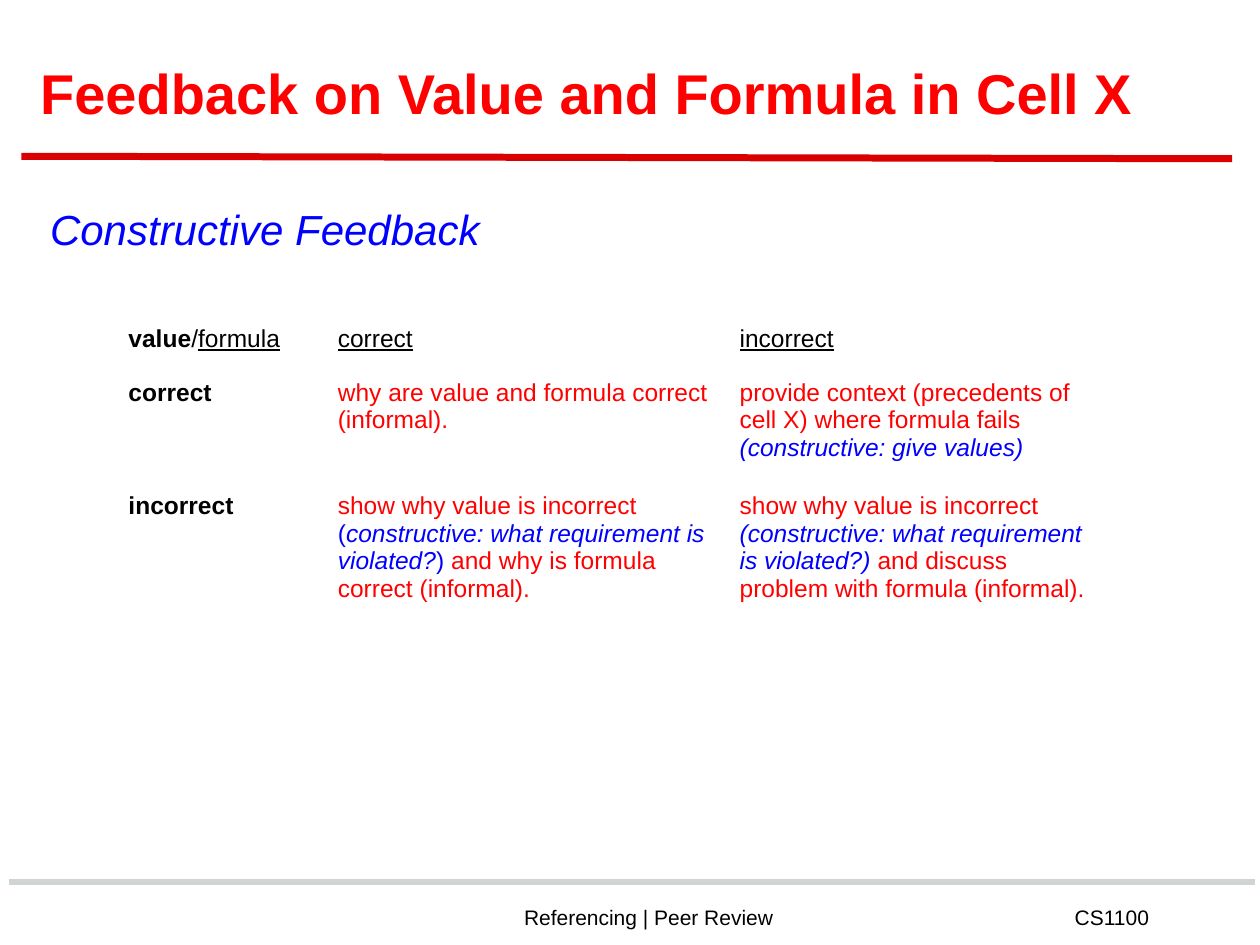
"""Build the slide on constructive feedback for the value and formula in a cell."""
from pptx import Presentation
from pptx.dml.color import RGBColor
from pptx.enum.shapes import MSO_CONNECTOR
from pptx.enum.text import MSO_ANCHOR, PP_ALIGN
from pptx.oxml.ns import qn
from pptx.util import Cm, Pt
from lxml.etree import SubElement

COLOURS = {
    "black": "000000",
    "red": "FF0000",
    "blue": "0000FF",
    "title_rule": "DA0002",
    "footer_rule": "CFD4D4",
}
INSET = 0.25

STYLES = {
    "plain": {},
    "bold": {"bold": True},
    "underline": {"underline": True},
    "red": {"colour": "red"},
    "blue": {"colour": "blue"},
    "hint": {"colour": "blue", "italic": True},
}

COLUMN_WIDTHS = (4.22, 8.1, 7.77)
ROW_HEIGHT = 1.07
FEEDBACK = [
    [
        [("value", "bold"), ("/", "plain"), ("formula", "underline")],
        [("correct", "underline")],
        [("incorrect", "underline")],
    ],
    [
        [("correct", "bold")],
        [("why are value and formula correct (informal).", "red")],
        [
            ("provide context (precedents of cell X) where formula fails ", "red"),
            ("(constructive: give values)", "hint"),
        ],
    ],
    [
        [("incorrect", "bold")],
        [
            ("show why value is incorrect ", "red"),
            ("(", "blue"),
            ("constructive: what requirement is violated?", "hint"),
            (")", "blue"),
            (" and why is formula correct (informal).", "red"),
        ],
        [
            ("show why value is incorrect ", "red"),
            ("(constructive: what requirement is violated?)", "hint"),
            (" and discuss problem with formula (informal).", "red"),
        ],
    ],
]


def rgb(name):
    return RGBColor.from_string(COLOURS[name])


def style_font(font, size, colour="black", bold=False, italic=False, underline=False):
    font.name = "Arial"
    font.size = Pt(size)
    font.color.rgb = rgb(colour)
    font.bold = bold
    font.italic = italic
    font.underline = underline


def add_rule(slide, start, end, colour):
    ends = [Cm(value) for value in (*start, *end)]
    rule = slide.shapes.add_connector(MSO_CONNECTOR.STRAIGHT, *ends)
    rule.line.color.rgb = rgb(colour)
    rule.line.width = Pt(4)
    SubElement(rule.element.spPr, qn("a:effectLst"))


def add_text(slide, box, words, size, top_inset=INSET, align=PP_ALIGN.LEFT,
             anchor=MSO_ANCHOR.TOP, **style):
    frame = slide.shapes.add_textbox(*[Cm(value) for value in box]).text_frame
    frame.word_wrap = True
    frame.vertical_anchor = anchor
    frame.margin_left = frame.margin_right = Cm(INSET)
    frame.margin_top, frame.margin_bottom = Cm(top_inset), Cm(INSET)
    frame.text = words
    paragraph = frame.paragraphs[0]
    paragraph.alignment = align
    style_font(paragraph.runs[0].font, size, **style)


def add_footer(slide, left, width, words):
    add_text(slide, (left, 17.93, width, 1.12), words, 12,
             align=PP_ALIGN.CENTER, anchor=MSO_ANCHOR.MIDDLE)


def fill_cell(cell, pieces):
    cell.fill.background()
    cell.margin_left = cell.margin_right = Cm(INSET)
    cell.margin_top = cell.margin_bottom = Cm(INSET)
    paragraph = cell.text_frame.paragraphs[0]
    for words, style in pieces:
        run = paragraph.add_run()
        run.text = words
        style_font(run.font, 14, **STYLES[style])


def add_feedback_table(slide, left, top):
    row_count = len(FEEDBACK)
    table = slide.shapes.add_table(
        row_count, len(COLUMN_WIDTHS), Cm(left), Cm(top),
        Cm(sum(COLUMN_WIDTHS)), Cm(row_count * ROW_HEIGHT)).table
    table.first_row = False
    table.horz_banding = False
    for column, width in zip(table.columns, COLUMN_WIDTHS):
        column.width = Cm(width)
    for row, contents in zip(table.rows, FEEDBACK):
        row.height = Cm(ROW_HEIGHT)
        for cell, pieces in zip(row.cells, contents):
            fill_cell(cell, pieces)


def main():
    presentation = Presentation()
    presentation.slide_width, presentation.slide_height = Cm(25.4), Cm(19.05)
    slide = presentation.slides.add_slide(presentation.slide_layouts[6])

    add_rule(slide, (0.18, 17.78), (25.3, 17.78), "footer_rule")
    add_footer(slide, 5.08, 16, "Referencing | Peer Review")
    add_footer(slide, 20.7, 3.43, "CS1100")
    add_rule(slide, (0.43, 3.15), (24.84, 3.2), "title_rule")
    add_text(slide, (0.56, 0.81, 23.67, 1.6), "Feedback on Value and Formula in Cell X",
             32, top_inset=0.38, colour="red", bold=True)
    add_text(slide, (0.76, 3.78, 23.67, 9.5), "Constructive Feedback",
             24, top_inset=0.33, colour="blue", italic=True)
    add_feedback_table(slide, 2.34, 6.3)

    presentation.save("out.pptx")


if __name__ == "__main__":
    main()
